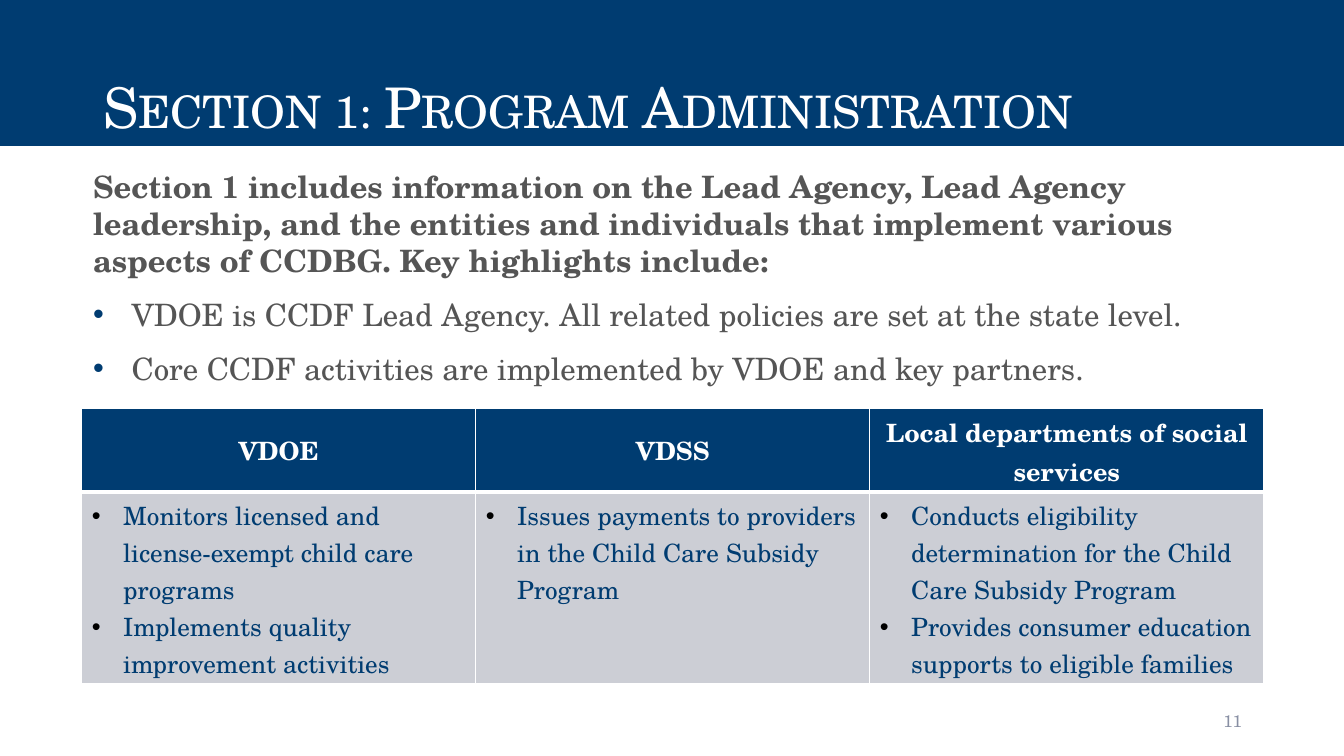
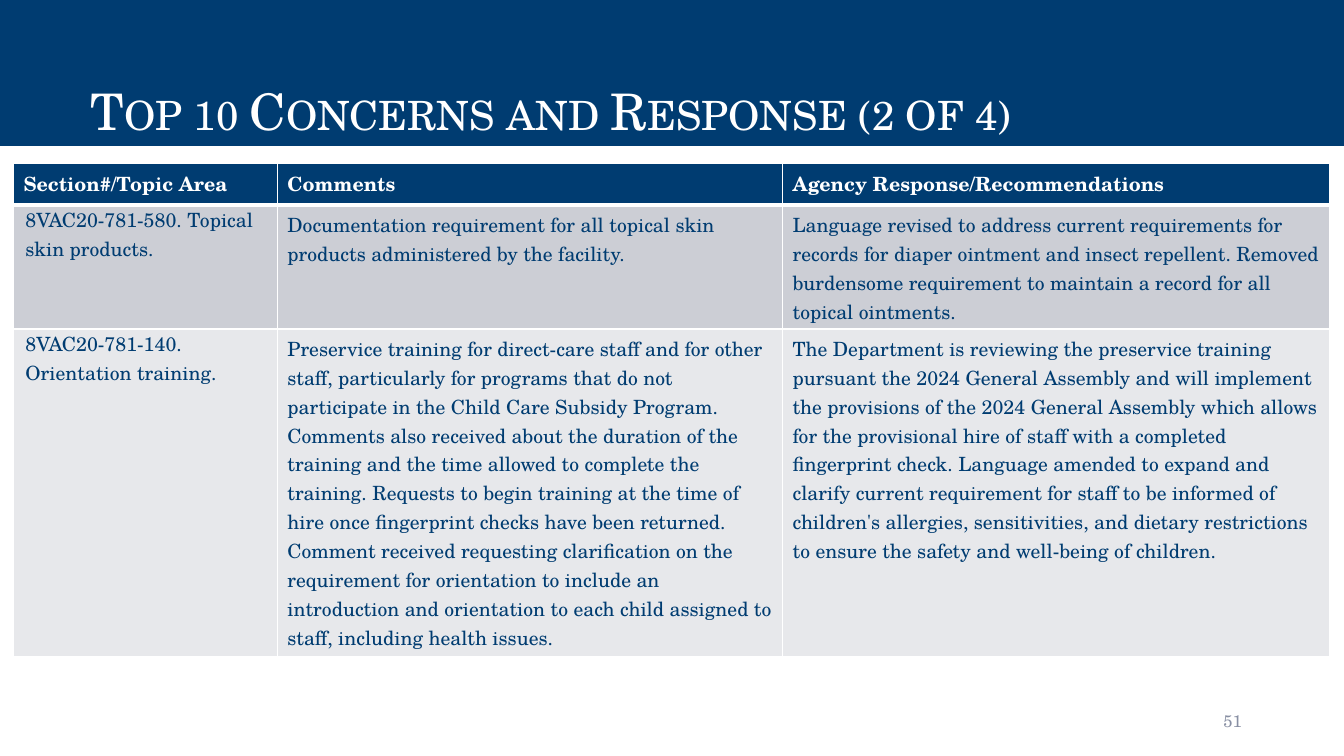
"""Build two slides on child care program rules."""
import dataclasses

import pptx
import pptx.dml.color
import pptx.enum.shapes
import pptx.enum.text
import pptx.oxml
import pptx.oxml.ns
import pptx.util

Cm = pptx.util.Cm
Pt = pptx.util.Pt
Align = pptx.enum.text.PP_ALIGN
Anchor = pptx.enum.text.MSO_ANCHOR


@dataclasses.dataclass(frozen=True)
class Theme:
    font: str = "TeX Gyre Schola"
    navy: str = "003C71"
    white: str = "FFFFFF"
    black: str = "000000"
    gray: str = "555555"
    pale: str = "888FA3"
    bands: tuple = ("CCCED5", "E7E8EB")
    body: int = 22
    lead: float = 26.4
    foot: int = 12
    thin: int = 1
    thick: int = 3


def tag(text):
    return pptx.oxml.parse_xml(
        text.replace(" ", f' {pptx.oxml.ns.nsdecls("a")} ', 1))


class Deck:
    def __init__(self, theme):
        self.theme = theme
        self.file = pptx.Presentation()
        self.file.slide_width = Cm(33.87)
        self.file.slide_height = Cm(19.05)
        self.slide = None

    def paint(self, item, color):
        item.fill.solid()
        item.fill.fore_color.rgb = pptx.dml.color.RGBColor.from_string(color)

    def run(self, para, text, size, color, bold=False):
        run = para.add_run()
        run.text = text
        font = run.font
        font.name, font.size, font.bold = self.theme.font, Pt(size), bold
        font.color.rgb = pptx.dml.color.RGBColor.from_string(color)
        return run

    def indent(self, para, left, first=0.0, color=None):
        props = para._p.get_or_add_pPr()
        props.set("marL", str(Cm(left)))
        props.set("indent", str(Cm(first)))
        if color:
            props.append(tag(f'<a:buClr ><a:srgbClr val="{color}"/></a:buClr>'))
            props.append(tag('<a:buFont typeface="Arial"/>'))
            props.append(tag('<a:buChar char="•"/>'))

    def box(self, left, top, width, height):
        frame = self.slide.shapes.add_textbox(
            Cm(left), Cm(top), Cm(width), Cm(height)).text_frame
        frame.word_wrap = True
        return frame

    def page(self, title, size, number, inset=2.29):
        self.slide = self.file.slides.add_slide(self.file.slide_layouts[6])
        band = self.slide.shapes.add_shape(
            pptx.enum.shapes.MSO_SHAPE.RECTANGLE,
            0, 0, self.file.slide_width, Cm(3.68))
        band.shadow.inherit = False
        self.paint(band, self.theme.navy)
        band.line.fill.background()
        frame = band.text_frame
        frame.word_wrap = True
        frame.vertical_anchor = Anchor.BOTTOM
        frame.margin_left = Cm(inset)
        para = frame.paragraphs[0]
        para.alignment = Align.LEFT
        para.line_spacing = 0.9
        run = self.run(para, title, size, self.theme.white)
        run._r.get_or_add_rPr().set("cap", "small")
        foot = self.box(23.93, 17.65, 7.62, 1.02)
        foot.vertical_anchor = Anchor.MIDDLE
        foot.paragraphs[0].alignment = Align.RIGHT
        self.run(foot.paragraphs[0], number, self.theme.foot, self.theme.pale)

    def body(self, intro, points):
        frame = self.box(1.8, 4.11, 29.21, 6)
        for spot, text in enumerate([intro, *points]):
            para = frame.add_paragraph() if spot else frame.paragraphs[0]
            para.space_after = Pt(12)
            para.line_spacing = Pt(self.theme.lead)
            if spot:
                self.indent(para, 1.27, -0.97, self.theme.navy)
            else:
                self.indent(para, 0.3)
            self.run(para, text, self.theme.body, self.theme.gray, not spot)

    def edge(self, cell, base):
        props = cell._tc.get_or_add_tcPr()
        sides = dict.fromkeys("LRT", self.theme.thin) | {"B": base}
        for spot, (side, width) in enumerate(sides.items()):
            props.insert(spot, tag(
                f'<a:ln{side} w="{Pt(width)}"><a:solidFill>'
                f'<a:srgbClr val="{self.theme.white}"/>'
                f'</a:solidFill></a:ln{side}>'))

    def cell(self, cell, lines, size, head, fill, list_gap):
        self.paint(cell, fill)
        self.edge(cell, self.theme.thick if head else self.theme.thin)
        color = self.theme.white if head else self.theme.navy
        for spot, text in enumerate(lines):
            frame = cell.text_frame
            para = frame.add_paragraph() if spot else frame.paragraphs[0]
            if list_gap and head:
                para.alignment = Align.CENTER
                cell.vertical_anchor = Anchor.MIDDLE
            elif list_gap:
                self.indent(para, list_gap, -list_gap, self.theme.black)
            self.run(para, text, size, color, head)

    def table(self, left, top, cols, rows, data, size, list_gap=0.0):
        grid = self.slide.shapes.add_table(
            len(rows), len(cols), Cm(left), Cm(top),
            Cm(sum(cols)), Cm(sum(rows))).table
        grid.first_row = grid.horz_banding = False
        for col, width in zip(grid.columns, cols):
            col.width = Cm(width)
        for spot, (row, height) in enumerate(zip(grid.rows, rows)):
            row.height = Cm(height)
            fill = self.theme.bands[(spot - 1) % 2] if spot else self.theme.navy
            for cell, lines in zip(row.cells, data[spot]):
                self.cell(cell, lines, size, not spot, fill, list_gap)
        return grid


def main():
    deck = Deck(Theme())

    deck.page("Section 1: Program Administration", 40, "11", 2.6)
    deck.body(
        "Section 1 includes information on the Lead Agency, Lead Agency "
        "leadership, and the entities and individuals that implement various "
        "aspects of CCDBG. Key highlights include:",
        ["VDOE is CCDF Lead Agency. All related policies are set at the "
         "state level.",
         "Core CCDF activities are implemented by VDOE and key partners."])
    roles = [
        [["VDOE"], ["VDSS"], ["Local departments of social services"]],
        [["Monitors licensed and license-exempt child care programs",
          "Implements quality improvement activities"],
         ["Issues payments to providers in the Child Care Subsidy Program"],
         ["Conducts eligibility determination for the Child Care Subsidy "
          "Program",
          "Provides consumer education supports to eligible families"]]]
    deck.table(2.06, 10.29, [9.93] * 3, [2.11, 4.83], roles, 18, 0.79)

    deck.page("Top 10 Concerns and Response (2 of 4)", 36, "51")
    issues = [
        [["Section#/Topic Area"], ["Comments"],
         ["Agency Response/Recommendations"]],
        [["8VAC20-781-580. Topical skin products."],
         ["Documentation requirement for all topical skin products "
          "administered by the facility."],
         ["Language revised to address current requirements for records for "
          "diaper ointment and insect repellent. Removed burdensome "
          "requirement to maintain a record for all topical ointments."]],
        [["8VAC20-781-140. Orientation training."],
         ["Preservice training for direct-care staff and for other staff, "
          "particularly for programs that do not participate in the Child "
          "Care Subsidy Program. Comments also received about the duration "
          "of the training and the time allowed to complete the training. "
          "Requests to begin training at the time of hire once fingerprint "
          "checks have been returned. Comment received requesting "
          "clarification on the requirement for orientation to include an "
          "introduction and orientation to each child assigned to staff, "
          "including health issues."],
         ["The Department is reviewing the preservice training pursuant the "
          "2024 General Assembly and will implement the provisions of the "
          "2024 General Assembly which allows for the provisional hire of "
          "staff with a completed fingerprint check. Language amended to "
          "expand and clarify current requirement for staff to be informed "
          "of children's allergies, sensitivities, and dietary restrictions "
          "to ensure the safety and well-being of children."]]]
    grid = deck.table(0.34, 4.13, [6.65, 12.73, 13.79], [1.04, 3.12, 8.26],
                      issues, 14)
    for row in (1, 2):
        cell = grid.cell(row, 0)
        cell.margin_left = cell.margin_right = Cm(0.3)
        cell.margin_top = cell.margin_bottom = 0

    deck.file.save("out.pptx")


if __name__ == "__main__":
    main()
